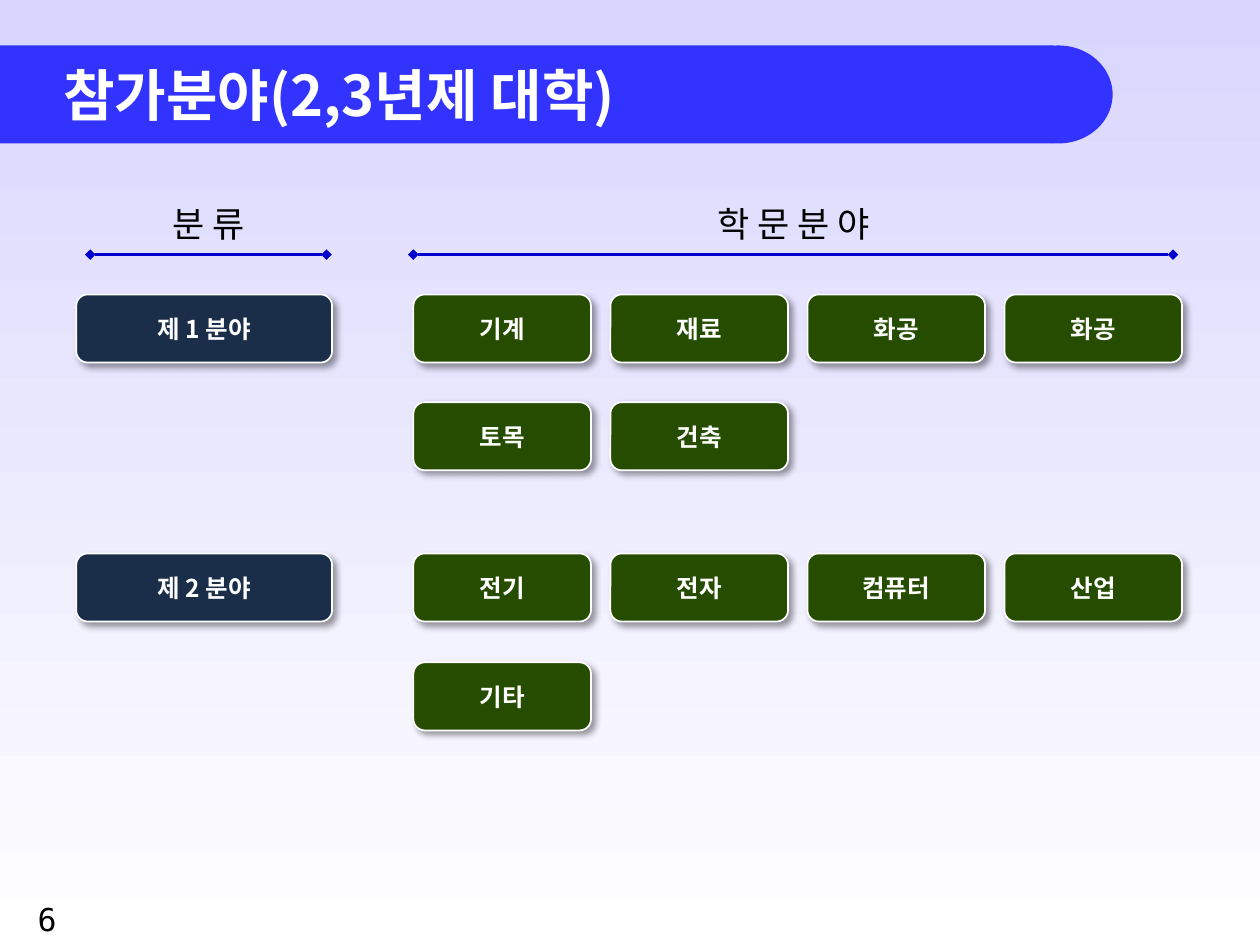
"""Build the slide listing the entry fields for two- and three-year colleges."""
from dataclasses import dataclass

from lxml.etree import SubElement
from pptx import Presentation
from pptx.dml.color import RGBColor
from pptx.enum.shapes import MSO_CONNECTOR as Connector, MSO_SHAPE as Preset
from pptx.enum.text import MSO_ANCHOR as Anchor, MSO_AUTO_SIZE as AutoSize, PP_ALIGN as Align
from pptx.oxml import parse_xml
from pptx.oxml.ns import nsdecls, qn
from pptx.shapes.autoshape import Shape
from pptx.slide import Slide
from pptx.util import Pt

WHITE = RGBColor(0xFF, 0xFF, 0xFF)
BLACK = RGBColor(0x00, 0x00, 0x00)
LAVENDER = RGBColor(0xD9, 0xD6, 0xFE)
BANNER_BLUE = RGBColor(0x33, 0x33, 0xFF)
RULE_BLUE = RGBColor(0x00, 0x00, 0xCC)
NAVY = RGBColor(0x1B, 0x2E, 0x49)
GREEN = RGBColor(0x26, 0x4C, 0x00)
KOREAN_FONT = "Noto Sans CJK KR"
NUMBER_FONT = "DejaVu Sans Mono"

BANNER_TOP, BANNER_HEIGHT = 26, 56
HEADING_TOP, HEADING_HEIGHT, RULE_TOP = 111.6, 32.4, 145.5
CATEGORY_LEFT, CATEGORY_WIDTH = 43.6, 146.2
FIELD_LEFT, FIELD_WIDTH, FIELD_PITCH = 236.2, 101.5, 112.6
BUTTON_HEIGHT = 38.9


@dataclass(frozen=True)
class Heading:
    label: str
    left: float
    width: float
    rule_start: float
    rule_end: float


@dataclass(frozen=True)
class FieldRow:
    top: float
    fields: tuple[str, ...]
    category: str = ""


HEADINGS = (
    Heading("분 류", 46, 146.2, 51.6, 186.6),
    Heading("학 문 분 야", 242.6, 422, 236.2, 670.3),
)
FIELD_ROWS = (
    FieldRow(168.3, ("기계", "재료", "화공", "화공"), "제 1 분야"),
    FieldRow(229.9, ("토목", "건축")),
    FieldRow(316.3, ("전기", "전자", "컴퓨터", "산업"), "제 2 분야"),
    FieldRow(378.5, ("기타",)),
)


def write(shape: Shape, text: str, size: float, color: RGBColor, align: Align,
          bold: bool = False, typeface: str = KOREAN_FONT) -> None:
    frame = shape.text_frame
    frame.text = text
    paragraph = frame.paragraphs[0]
    paragraph.alignment = align
    font = paragraph.runs[0].font
    font.size, font.bold, font.name = Pt(size), bold, typeface
    font.color.rgb = color
    SubElement(paragraph.runs[0]._r.rPr, qn("a:ea"), typeface=typeface)


def paint_background(slide: Slide) -> None:
    fill = slide.background.fill
    fill.gradient()
    fill.gradient_angle = 270
    for stop, color, position in zip(fill.gradient_stops, (LAVENDER, WHITE), (0, 1)):
        stop.color.rgb = color
        stop.position = position


def add_banner(slide: Slide, text: str) -> None:
    title = slide.shapes.title
    title.left, title.top = Pt(0), Pt(BANNER_TOP)
    title.width, title.height = Pt(602), Pt(BANNER_HEIGHT)
    title.fill.solid()
    title.fill.fore_color.rgb = BANNER_BLUE
    title.text_frame.auto_size = AutoSize.NONE
    title.text_frame.vertical_anchor = Anchor.MIDDLE
    write(title, text, 32, WHITE, Align.LEFT, bold=True)
    title.text_frame.paragraphs[0]._p.get_or_add_pPr().set("marL", str(Pt(28.8)))

    cap = slide.shapes.add_shape(Preset.OVAL, Pt(573.8), Pt(BANNER_TOP), Pt(62), Pt(BANNER_HEIGHT))
    cap.shadow.inherit = False
    cap.fill.solid()
    cap.fill.fore_color.rgb = BANNER_BLUE
    cap.line.fill.background()


def add_heading(slide: Slide, heading: Heading) -> None:
    label = slide.shapes.add_shape(Preset.FLOWCHART_ALTERNATE_PROCESS, Pt(heading.left),
                                   Pt(HEADING_TOP), Pt(heading.width), Pt(HEADING_HEIGHT))
    label.shadow.inherit = False
    label.fill.background()
    label.line.fill.background()
    label.text_frame.word_wrap = False
    label.text_frame.vertical_anchor = Anchor.MIDDLE
    write(label, heading.label, 20, BLACK, Align.CENTER)

    rule = slide.shapes.add_connector(Connector.STRAIGHT, Pt(heading.rule_start), Pt(RULE_TOP),
                                      Pt(heading.rule_end), Pt(RULE_TOP))
    rule.line.width = Pt(2)
    rule.line.color.rgb = RULE_BLUE
    for end in ("a:headEnd", "a:tailEnd"):
        SubElement(rule.line._get_or_add_ln(), qn(end), type="diamond")
    SubElement(rule._element.spPr, qn("a:effectLst"))


def add_button(slide: Slide, text: str, left: float, top: float, width: float,
               color: RGBColor) -> None:
    button = slide.shapes.add_shape(Preset.ROUNDED_RECTANGLE, Pt(left), Pt(top),
                                    Pt(width), Pt(BUTTON_HEIGHT))
    button.fill.solid()
    button.fill.fore_color.rgb = color
    button.line.color.rgb = WHITE
    button.line.width = Pt(1)
    button._element.spPr.append(parse_xml(
        f'<a:effectLst {nsdecls("a")}>'
        f'<a:outerShdw blurRad="{Pt(4)}" dist="{Pt(3)}" dir="2700000" algn="tl" rotWithShape="0">'
        f'<a:srgbClr val="{BLACK}"><a:alpha val="40000"/></a:srgbClr>'
        '</a:outerShdw></a:effectLst>'))
    frame = button.text_frame
    frame.margin_left = frame.margin_right = frame.margin_top = frame.margin_bottom = Pt(0)
    frame.vertical_anchor = Anchor.MIDDLE
    write(button, text, 14, WHITE, Align.CENTER, bold=True)


def add_field_row(slide: Slide, row: FieldRow) -> None:
    if row.category:
        add_button(slide, row.category, CATEGORY_LEFT, row.top, CATEGORY_WIDTH, NAVY)
    for column, field in enumerate(row.fields):
        add_button(slide, field, FIELD_LEFT + column * FIELD_PITCH, row.top, FIELD_WIDTH, GREEN)


def add_page_number(slide: Slide, number: str) -> None:
    page_number = slide.shapes.add_textbox(Pt(14.4), Pt(510.5), Pt(40.3), Pt(28.8))
    page_number.text_frame.word_wrap = True
    write(page_number, number, 18, BLACK, Align.LEFT, typeface=NUMBER_FONT)


def main() -> None:
    deck = Presentation()
    deck.slide_width, deck.slide_height = Pt(720), Pt(540)
    slide = deck.slides.add_slide(deck.slide_layouts[5])
    paint_background(slide)
    add_banner(slide, "참가분야(2,3년제 대학)")
    for heading in HEADINGS:
        add_heading(slide, heading)
    for row in FIELD_ROWS:
        add_field_row(slide, row)
    add_page_number(slide, "6")
    deck.save("out.pptx")


if __name__ == "__main__":
    main()
